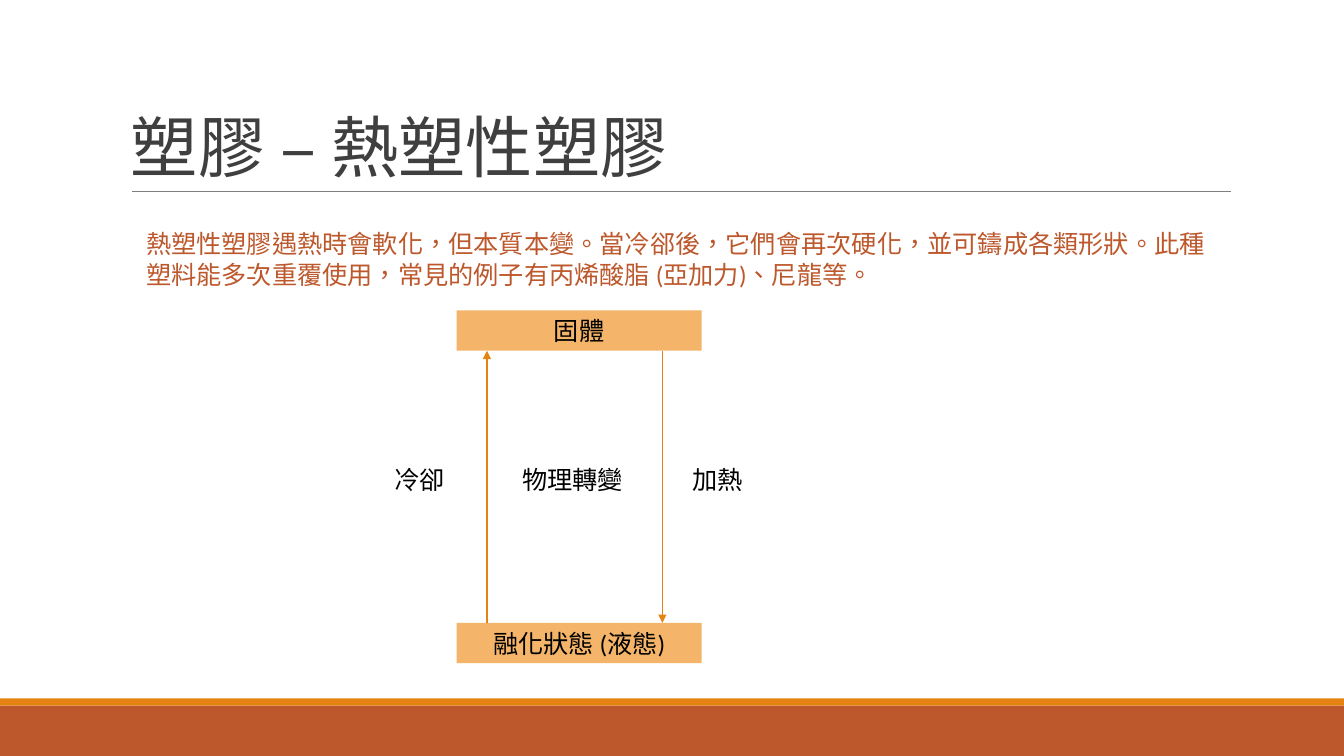
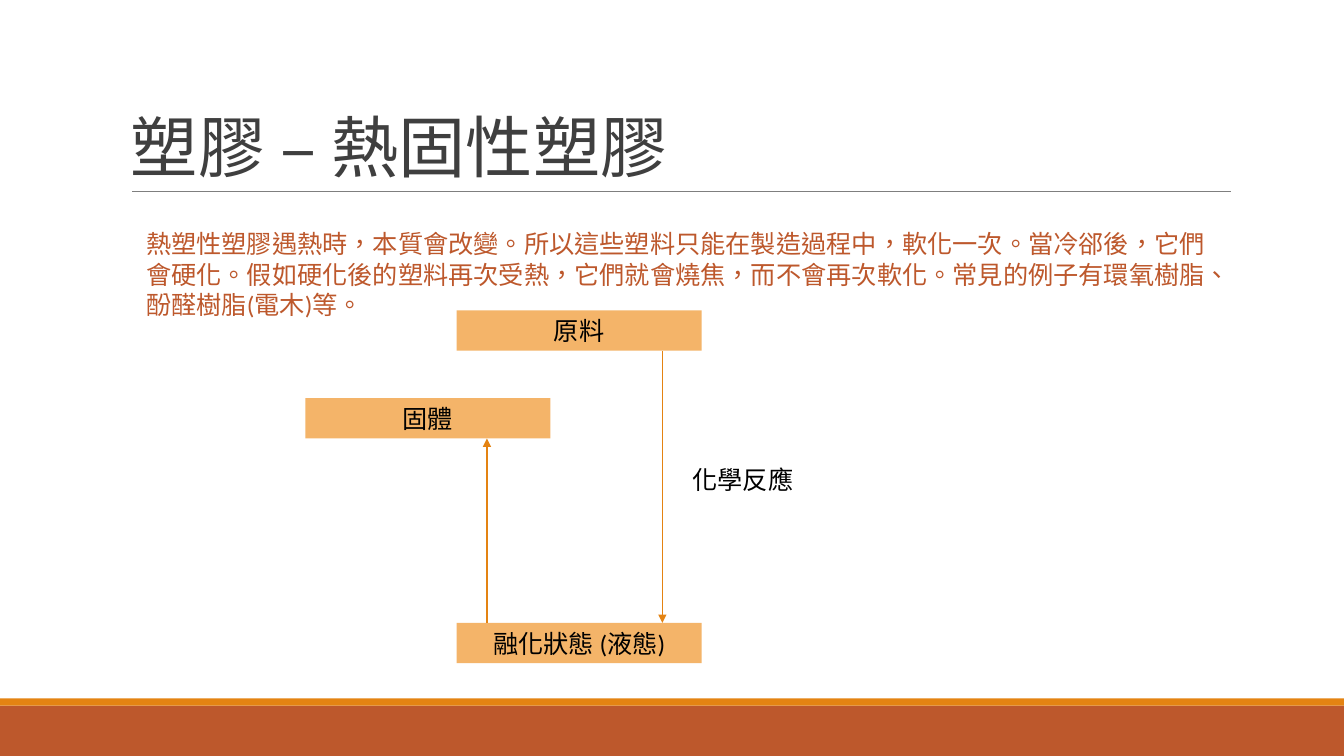
from lxml.etree import SubElement
from pptx import Presentation
from pptx.dml.color import RGBColor
from pptx.enum.lang import MSO_LANGUAGE_ID
from pptx.enum.shapes import MSO_CONNECTOR, MSO_SHAPE
from pptx.enum.text import MSO_ANCHOR, MSO_AUTO_SIZE, PP_ALIGN
from pptx.oxml.ns import qn
from pptx.util import Inches, Pt

FONT = "Calibri"
RUST, ORANGE, PEACH = "BD582C", "E48312", "F4B469"
BLACK, CHARCOAL, GRAY = "000000", "3F3F3F", "7F7F7F"

STATE_WIDTH, ROW_HEIGHT = 2.43, 0.4
STATE_LEFT, SOLID_LEFT = 4.53, 3.03
TOP_ROW, SOLID_ROW, LABEL_ROW, MELT_ROW = 3.08, 3.95, 4.56, 6.18
COOLING_X, HEATING_X = 4.83, 6.57


def color(value):
    return RGBColor.from_string(value)


def write(frame, text, size, shade, align=PP_ALIGN.LEFT):
    frame.word_wrap = True
    para = frame.paragraphs[0]
    para.alignment = align
    span = para.add_run()
    span.text = text
    span.font.name = FONT
    span.font.size = Pt(size)
    span.font.color.rgb = color(shade)
    span.font.language_id = MSO_LANGUAGE_ID.TRADITIONAL_CHINESE
    return para


def add_rectangle(page, left, top, width, height, fill):
    shape = page.shapes.add_shape(
        MSO_SHAPE.RECTANGLE, Inches(left), Inches(top), Inches(width), Inches(height)
    )
    shape.shadow.inherit = False
    shape.fill.solid()
    shape.fill.fore_color.rgb = color(fill)
    shape.line.fill.background()
    return shape


def add_text(page, left, top, width, height, text, shade=BLACK):
    box = page.shapes.add_textbox(
        Inches(left), Inches(top), Inches(width), Inches(height)
    )
    write(box.text_frame, text, 18, shade)
    box.text_frame.auto_size = MSO_AUTO_SIZE.SHAPE_TO_FIT_TEXT


def add_title(page, text):
    box = page.shapes.add_textbox(Inches(1.2), Inches(0.31), Inches(11), Inches(1.59))
    box.text_frame.vertical_anchor = MSO_ANCHOR.BOTTOM
    write(box.text_frame, text, 48, CHARCOAL).line_spacing = 0.85


def add_line(page, start, end, shade, weight):
    line = page.shapes.add_connector(
        MSO_CONNECTOR.STRAIGHT, *(Inches(value) for value in (*start, *end))
    )
    line.line.color.rgb = color(shade)
    line.line.width = Pt(weight)
    SubElement(line._element.spPr, qn("a:effectLst"))
    return line


def add_arrow(page, x, start, end):
    arrow = add_line(page, (x, start), (x, end), ORANGE, 1)
    SubElement(arrow.line._get_or_add_ln(), qn("a:tailEnd"), type="triangle")


def add_state(page, left, top, text):
    shape = add_rectangle(page, left, top, STATE_WIDTH, ROW_HEIGHT, PEACH)
    frame = shape.text_frame
    frame.vertical_anchor = MSO_ANCHOR.TOP
    write(frame, text, 18, BLACK, PP_ALIGN.CENTER)
    frame.auto_size = MSO_AUTO_SIZE.SHAPE_TO_FIT_TEXT


def add_label(page, left, width, text):
    add_text(page, left, LABEL_ROW, width, ROW_HEIGHT, text)


def add_page(deck, title, description):
    page = deck.slides.add_slide(deck.slide_layouts[6])
    add_rectangle(page, 0, 7, 13.33, 0.5, RUST)
    add_rectangle(page, 0, 6.93, 13.33, 0.07, ORANGE)
    add_line(page, (1.31, 1.9), (12.21, 1.9), GRAY, 0.75)
    add_title(page, title)
    add_text(page, 1.35, 2.22, 10.85, 1.01, description, RUST)
    return page


def add_cycle(page, top_state, solid_row):
    add_state(page, STATE_LEFT, TOP_ROW, top_state)
    add_state(page, STATE_LEFT, MELT_ROW, "融化狀態 (液態)")
    add_arrow(page, HEATING_X, TOP_ROW + ROW_HEIGHT, MELT_ROW)
    add_arrow(page, COOLING_X, MELT_ROW, solid_row + ROW_HEIGHT)


def add_thermoplastic(deck):
    page = add_page(
        deck,
        "塑膠 – 熱塑性塑膠",
        "熱塑性塑膠遇熱時會軟化，但本質本變。當冷郤後，它們會再次硬化，"
        "並可鑄成各類形狀。此種塑料能多次重覆使用，"
        "常見的例子有丙烯酸脂 (亞加力)、尼龍等。",
    )
    add_cycle(page, "固體", TOP_ROW)
    add_label(page, 6.77, 0.82, "加熱")
    add_label(page, 3.81, 0.82, "冷卻")
    add_label(page, 5.08, 1.24, "物理轉變")


def add_thermoset(deck):
    page = add_page(
        deck,
        "塑膠 – 熱固性塑膠",
        "熱塑性塑膠遇熱時，本質會改變。所以這些塑料只能在製造過程中，軟化一次。"
        "當冷郤後，它們會硬化。假如硬化後的塑料再次受熱，它們就會燒焦，"
        "而不會再次軟化。常見的例子有環氧樹脂、酚醛樹脂(電木)等。",
    )
    add_cycle(page, "原料", SOLID_ROW)
    add_label(page, 6.77, 1.41, "化學反應")
    add_state(page, SOLID_LEFT, SOLID_ROW, "固體")


def main():
    deck = Presentation()
    deck.slide_width = Inches(13.33)
    deck.slide_height = Inches(7.5)
    add_thermoplastic(deck)
    add_thermoset(deck)
    deck.save("out.pptx")


if __name__ == "__main__":
    main()
